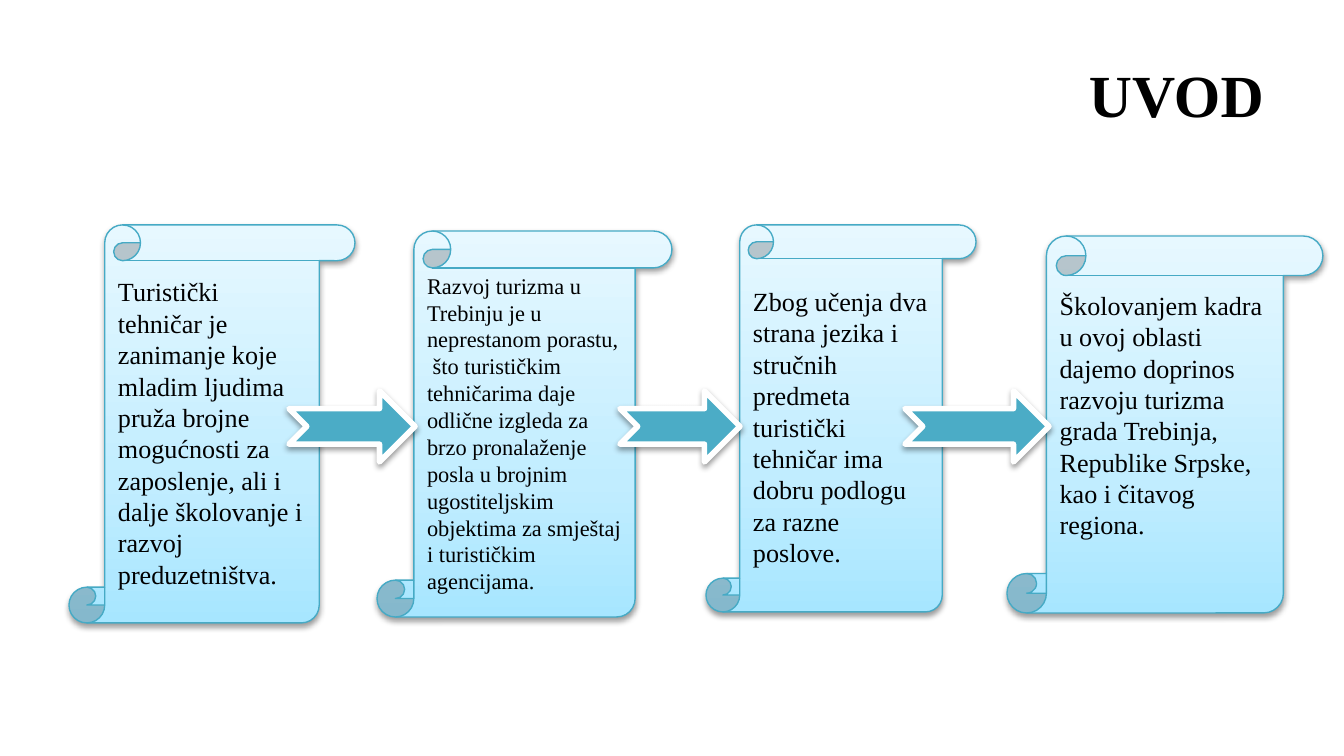
from copy import deepcopy

from lxml import etree
from pptx import Presentation
from pptx import util as u
from pptx.dml.color import RGBColor
from pptx.enum import shapes, text
from pptx.oxml import ns

PX = 914400 / 134.4
FONT = "Times New Roman"
COLORS = {
    "text": "000000",
    "scroll_line": "46AAC5",
    "arrow": "4BACC6",
    "arrow_line": "FFFFFF",
    "shadow": "000000",
}
GRADIENT = [(0, "A7E6FF"), (0.35, "C1EDFF"), (1, "E7F8FF")]


def style_text(frame, words, size, align, bold=False):
    frame.word_wrap = True
    frame.vertical_anchor = text.MSO_ANCHOR.MIDDLE
    para = frame.paragraphs[0]
    para.text = words
    para.alignment = align
    para.font.name = FONT
    para.font.size = u.Pt(size)
    para.font.bold = bold
    para.font.color.rgb = RGBColor.from_string(COLORS["text"])


def add_shadowed(kind, bounds, line_color, line_width):
    """Add a preset shape with an outline and a soft shadow below it."""
    shape = page.shapes.add_shape(kind, *[round(n * PX) for n in bounds])
    shape.line.color.rgb = RGBColor.from_string(line_color)
    shape.line.width = u.Pt(line_width)
    shape.shadow.inherit = False
    effects = shape._element.spPr.find(ns.qn("a:effectLst"))
    shadow = etree.SubElement(effects, ns.qn("a:outerShdw"), blurRad="40000",
                              dist="20000", dir="5400000", rotWithShape="0")
    color = etree.SubElement(shadow, ns.qn("a:srgbClr"), val=COLORS["shadow"])
    etree.SubElement(color, ns.qn("a:alpha"), val="38000")
    return shape


deck = Presentation()
deck.slide_width = round(1344 * PX)
deck.slide_height = round(756 * PX)
page = deck.slides.add_slide(deck.slide_layouts[6])

title = page.shapes.add_textbox(*[round(n * PX) for n in (67, 31, 1210, 126)])
style_text(title.text_frame, "UVOD", 32, text.PP_ALIGN.RIGHT, bold=True)

# Bounds, font size, bottom inset, wording
scrolls = [
    ((69, 225, 286, 398), 14, 7,
     "Turistički tehničar je zanimanje koje mladim ljudima pruža brojne "
     "mogućnosti za zaposlenje, ali i dalje školovanje i razvoj preduzetništva."),
    ((377, 231, 295, 386), 12, 7,
     "Razvoj turizma u Trebinju je u neprestanom porastu,  što turističkim "
     "tehničarima daje odlične izgleda za brzo pronalaženje posla u brojnim "
     "ugostiteljskim objektima za smještaj i turističkim agencijama."),
    ((706, 225, 270, 387), 14, 7,
     "Zbog učenja dva strana jezika i stručnih predmeta turistički tehničar "
     "ima dobru podlogu za razne poslove."),
    ((1007, 236, 316, 377), 14, 46,
     "Školovanjem kadra u ovoj oblasti dajemo doprinos razvoju turizma grada "
     "Trebinja, Republike Srpske, kao i čitavog regiona."),
]
for bounds, size, bottom, words in scrolls:
    scroll = add_shadowed(shapes.MSO_SHAPE.VERTICAL_SCROLL, bounds,
                          COLORS["scroll_line"], 0.75)
    scroll.fill.gradient()
    scroll.fill.gradient_angle = 90
    stops = scroll._element.spPr.find(ns.qn("a:gradFill")).find(ns.qn("a:gsLst"))
    stops.append(deepcopy(stops[0]))
    for stop, (position, color) in zip(scroll.fill.gradient_stops, GRADIENT):
        stop.position = position
        stop.color.rgb = RGBColor.from_string(color)
    style_text(scroll.text_frame, words, size, text.PP_ALIGN.LEFT)
    scroll.text_frame.margin_bottom = round(bottom * PX)

for left, width in [(289, 126), (620, 120), (905, 144)]:
    arrow = add_shadowed(shapes.MSO_SHAPE.NOTCHED_RIGHT_ARROW,
                         (left, 391, width, 71), COLORS["arrow_line"], 3)
    arrow.fill.solid()
    arrow.fill.fore_color.rgb = RGBColor.from_string(COLORS["arrow"])

deck.save("out.pptx")
